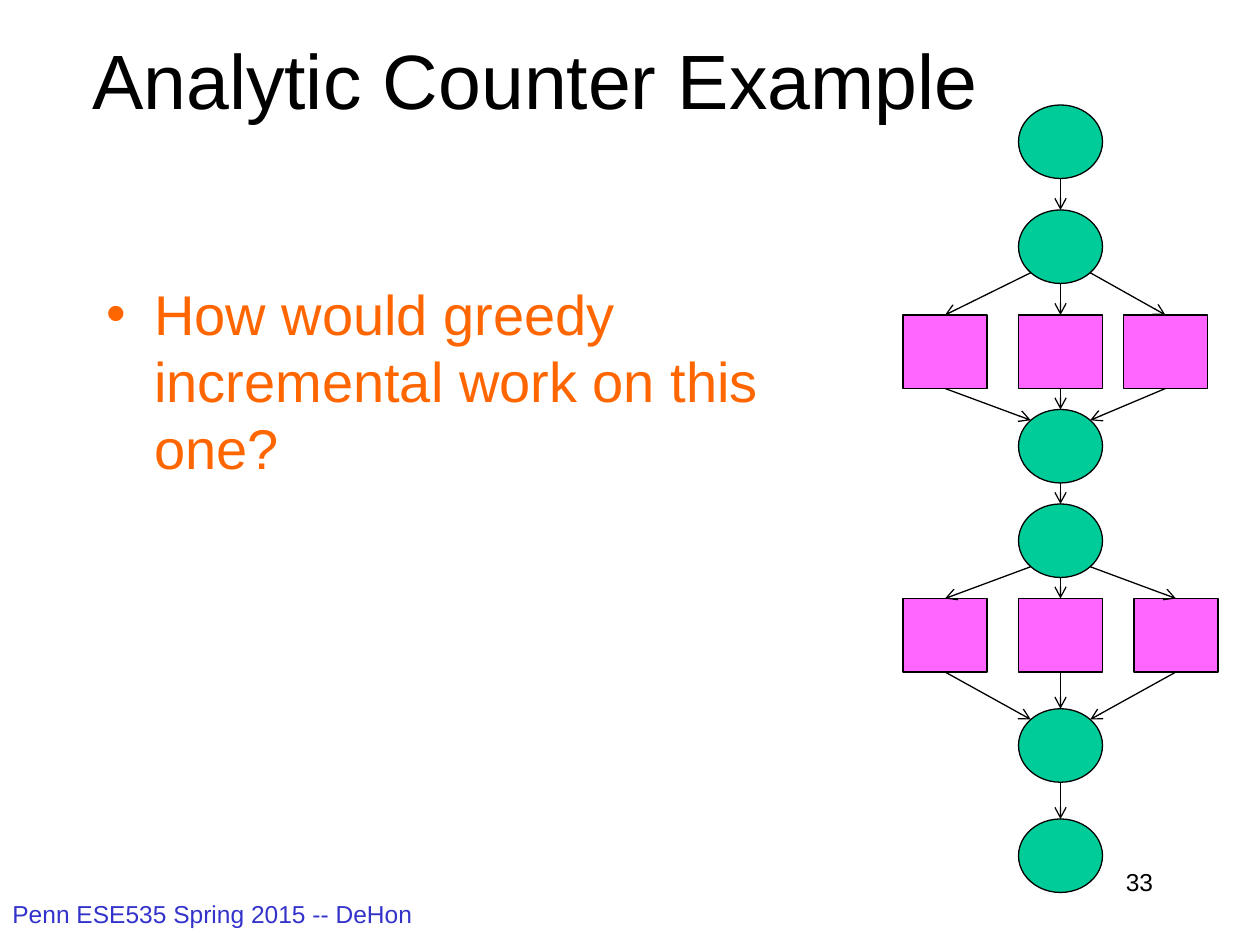
import math
from dataclasses import dataclass

import pptx
import pptx.dml.color
import pptx.enum.shapes
import pptx.enum.text
import pptx.oxml.ns
import pptx.shapes.shapetree
import pptx.slide
import pptx.util
from lxml import etree

Pt = pptx.util.Pt
RGBColor = pptx.dml.color.RGBColor
Kind = pptx.enum.shapes.MSO_SHAPE
Align = pptx.enum.text.PP_ALIGN
Anchor = pptx.enum.text.MSO_ANCHOR
qn = pptx.oxml.ns.qn

BLACK = RGBColor(0x00, 0x00, 0x00)
GREEN = RGBColor(0x00, 0xCC, 0x99)
PINK = RGBColor(0xFF, 0x66, 0xFF)
ORANGE = RGBColor(0xFF, 0x66, 0x00)
BLUE = RGBColor(0x33, 0x33, 0xCC)

NODE_W, NODE_H = 48, 42
LEFT_X, CENTER_X = 516, 582
LINE_WIDTH = 0.75


@dataclass(frozen=True)
class Node:
    x: float
    y: float
    kind: Kind = Kind.OVAL
    fill: RGBColor = GREEN

    def port(self, side: int, end: int) -> tuple[float, float]:
        """Point on the edge: side -1/0/1 is left/middle/right, end -1/1 is top/bottom."""
        slant = math.sqrt(0.5) if side else 1
        return (self.x + NODE_W / 2 * (1 + side * slant),
                self.y + NODE_H / 2 * (1 + end * slant))


@dataclass(frozen=True)
class Stage:
    """A circle that fans out to three squares and joins again in a circle."""
    fork_y: float
    squares_y: float
    join_y: float
    right_x: float


STAGES = [Stage(120, 180, 234, 642), Stage(288, 342, 405, 648)]


def add_text(slide: pptx.slide.Slide, text: str, box: tuple[float, float, float, float], *,
             size: float, color: RGBColor = BLACK, align: Align = Align.LEFT,
             anchor: Anchor = Anchor.TOP, bullet_indent: float = 0) -> None:
    frame = slide.shapes.add_textbox(*map(Pt, box)).text_frame
    frame.word_wrap = True
    frame.vertical_anchor = anchor
    paragraph = frame.paragraphs[0]
    paragraph.alignment = align
    if bullet_indent:
        properties = paragraph._p.get_or_add_pPr()
        properties.set("marL", str(Pt(bullet_indent)))
        properties.set("indent", str(-Pt(bullet_indent)))
        etree.SubElement(properties, qn("a:buFont")).set("typeface", "Arial")
        etree.SubElement(properties, qn("a:buChar")).set("char", "•")
    run = paragraph.add_run()
    run.text = text
    run.font.name = "Arial"
    run.font.size = Pt(size)
    run.font.color.rgb = color


def add_node(shapes: pptx.shapes.shapetree.GroupShapes, node: Node) -> None:
    shape = shapes.add_shape(node.kind, Pt(node.x), Pt(node.y), Pt(NODE_W), Pt(NODE_H))
    shape.shadow.inherit = False
    shape.fill.solid()
    shape.fill.fore_color.rgb = node.fill
    shape.line.color.rgb = BLACK
    shape.line.width = Pt(LINE_WIDTH)


def add_arrow(shapes: pptx.shapes.shapetree.GroupShapes,
              start: tuple[float, float], end: tuple[float, float]) -> None:
    arrow = shapes.add_connector(pptx.enum.shapes.MSO_CONNECTOR.STRAIGHT,
                                 *(Pt(value) for value in (*start, *end)))
    arrow.line.color.rgb = BLACK
    arrow.line.width = Pt(LINE_WIDTH)
    etree.SubElement(arrow.line._get_or_add_ln(), qn("a:tailEnd")).set("type", "arrow")
    etree.SubElement(arrow._element.spPr, qn("a:effectLst"))


def add_graph(slide: pptx.slide.Slide) -> None:
    shapes = slide.shapes.add_group_shape().shapes
    nodes: list[Node] = []
    arrows: list[tuple[tuple[float, float], tuple[float, float]]] = []

    # Stages follow one another between the first and last circle
    previous = Node(CENTER_X, 60)
    nodes.append(previous)
    for stage in STAGES:
        fork, join = Node(CENTER_X, stage.fork_y), Node(CENTER_X, stage.join_y)
        arrows.append((previous.port(0, 1), fork.port(0, -1)))
        nodes += [fork, join]
        for side, x in zip((-1, 0, 1), (LEFT_X, CENTER_X, stage.right_x)):
            square = Node(x, stage.squares_y, Kind.RECTANGLE, PINK)
            nodes.append(square)
            arrows.append((fork.port(side, 1), square.port(0, -1)))
            arrows.append((square.port(0, 1), join.port(side, -1)))
        previous = join
    last = Node(CENTER_X, 468)
    nodes.append(last)
    arrows.append((previous.port(0, 1), last.port(0, -1)))

    for node in nodes:
        add_node(shapes, node)
    for start, end in arrows:
        add_arrow(shapes, start, end)


def main() -> None:
    deck = pptx.Presentation()
    deck.slide_width, deck.slide_height = Pt(720), Pt(540)
    slide = deck.slides.add_slide(deck.slide_layouts[6])

    # Title and question
    add_text(slide, "Analytic Counter Example", (0, 0, 612, 90), size=44,
             align=Align.CENTER, anchor=Anchor.MIDDLE)
    add_text(slide, "How would greedy incremental work on this one?", (54, 156, 450, 324),
             size=32, color=ORANGE, bullet_indent=27)

    # Footer and page number
    add_text(slide, "Penn ESE535 Spring 2015 -- DeHon", (0, 510, 276, 30), size=14, color=BLUE)
    add_text(slide, "33", (516, 492, 150, 36), size=14, align=Align.RIGHT)

    # Task graph
    add_graph(slide)
    deck.save("out.pptx")


if __name__ == "__main__":
    main()
